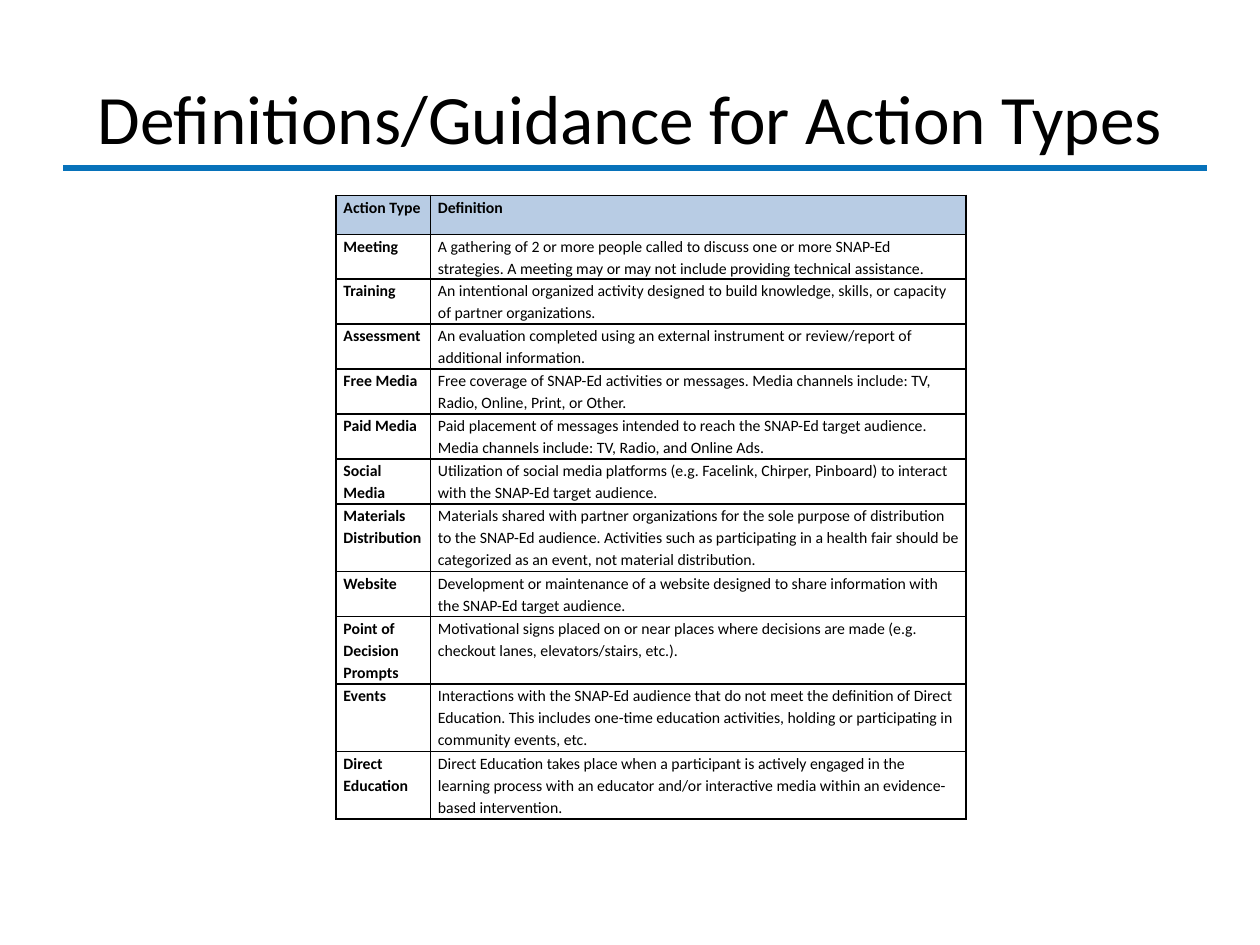
from lxml.etree import SubElement
from pptx import Presentation
from pptx.dml.color import RGBColor
from pptx.enum.shapes import MSO_CONNECTOR as Connector
from pptx.enum.text import MSO_ANCHOR as Anchor, PP_ALIGN as Align
from pptx.oxml.ns import qn
from pptx.util import Pt

FONT = "Calibri"
BLACK, BLUE, HEADER_FILL = "000000", "0772BA", "B8CCE4"
COLUMN_WIDTHS = (54, 306)
HEADER_HEIGHT = 22.3
# Row height by the number of text lines in the row
LINE_HEIGHTS = {2: 25.7, 3: 38.6}

# Action type, definition, number of lines
ACTIONS = [
    ("Meeting", "A gathering of 2 or more people called to discuss one or more SNAP-Ed strategies. "
     "A meeting may or may not include providing technical assistance.", 2),
    ("Training", "An intentional organized activity designed to build knowledge, skills, "
     "or capacity of partner organizations.", 2),
    ("Assessment", "An evaluation completed using an external instrument or review/report "
     "of additional information.", 2),
    ("Free Media", "Free coverage of SNAP-Ed activities or messages. Media channels include: "
     "TV, Radio, Online, Print, or Other.", 2),
    ("Paid Media", "Paid placement of messages intended to reach the SNAP-Ed target audience. "
     "Media channels include: TV, Radio, and Online Ads.", 2),
    ("Social Media", "Utilization of social media platforms (e.g. Facelink, Chirper, Pinboard) "
     "to interact with the SNAP-Ed target audience.", 2),
    ("Materials Distribution", "Materials shared with partner organizations for the sole purpose "
     "of distribution to the SNAP-Ed audience. Activities such as participating in a health fair "
     "should be categorized as an event, not material distribution.", 3),
    ("Website", "Development or maintenance of a website designed to share information "
     "with the SNAP-Ed target audience.", 2),
    ("Point of Decision Prompts", "Motivational signs placed on or near places where decisions "
     "are made (e.g. checkout lanes, elevators/stairs, etc.).", 3),
    ("Events", "Interactions with the SNAP-Ed audience that do not meet the definition of Direct "
     "Education. This includes one-time education activities, holding or participating in "
     "community events, etc.", 3),
    ("Direct Education", "Direct Education takes place when a participant is actively engaged in "
     "the learning process with an educator and/or interactive media within an evidence-based "
     "intervention.", 3),
]


def color(hex_text):
    return RGBColor.from_string(hex_text)


def set_font(para, size, bold=False):
    para.font.name = FONT
    para.font.size = Pt(size)
    para.font.bold = bold
    para.font.color.rgb = color(BLACK)


def add_title(page, text):
    box = page.shapes.add_textbox(Pt(36), Pt(21.6), Pt(648), Pt(90))
    frame = box.text_frame
    frame.word_wrap = True
    frame.vertical_anchor = Anchor.MIDDLE
    para = frame.paragraphs[0]
    para.text = text
    para.alignment = Align.CENTER
    set_font(para, 39.6)


def add_rule(page, left, right, top):
    rule = page.shapes.add_connector(Connector.STRAIGHT, Pt(left), Pt(top), Pt(right), Pt(top))
    rule.line.color.rgb = color(BLUE)
    rule.line.width = Pt(3)
    SubElement(rule._element.spPr, qn("a:effectLst"))


def add_borders(cell):
    properties = cell._tc.get_or_add_tcPr()
    for side in ("a:lnL", "a:lnR", "a:lnT", "a:lnB"):
        line = SubElement(properties, qn(side), w=str(Pt(1)))
        fill = SubElement(line, qn("a:solidFill"))
        SubElement(fill, qn("a:srgbClr"), val=BLACK)


def fill_cell(cell, text, bold, fill):
    add_borders(cell)
    if fill:
        cell.fill.solid()
        cell.fill.fore_color.rgb = color(fill)
    else:
        cell.fill.background()
    cell.margin_left = cell.margin_right = Pt(4.3)
    cell.margin_top = cell.margin_bottom = Pt(0)
    para = cell.text_frame.paragraphs[0]
    para.text = text
    para.line_spacing = 1.15
    set_font(para, 9, bold)


def add_action_table(page, left, top):
    heights = [HEADER_HEIGHT] + [LINE_HEIGHTS[lines] for _, _, lines in ACTIONS]
    table = page.shapes.add_table(len(heights), len(COLUMN_WIDTHS), Pt(left), Pt(top),
                                  Pt(sum(COLUMN_WIDTHS)), Pt(sum(heights))).table
    for column, width in zip(table.columns, COLUMN_WIDTHS):
        column.width = Pt(width)
    for row, height in zip(table.rows, heights):
        row.height = Pt(height)

    # Header row, then one row per action type
    for cell, text in zip(table.rows[0].cells, ("Action Type", "Definition")):
        fill_cell(cell, text, True, HEADER_FILL)
    for index, (action, definition, _) in enumerate(ACTIONS, start=1):
        fill_cell(table.cell(index, 0), action, True, None)
        fill_cell(table.cell(index, 1), definition, False, None)


def main():
    deck = Presentation()
    deck.slide_width, deck.slide_height = Pt(720), Pt(540)
    page = deck.slides.add_slide(deck.slide_layouts[6])
    add_rule(page, 36, 690, 96)
    add_title(page, "Definitions/Guidance for Action Types")
    add_action_table(page, 192, 111.6)
    deck.save("out.pptx")


if __name__ == "__main__":
    main()
